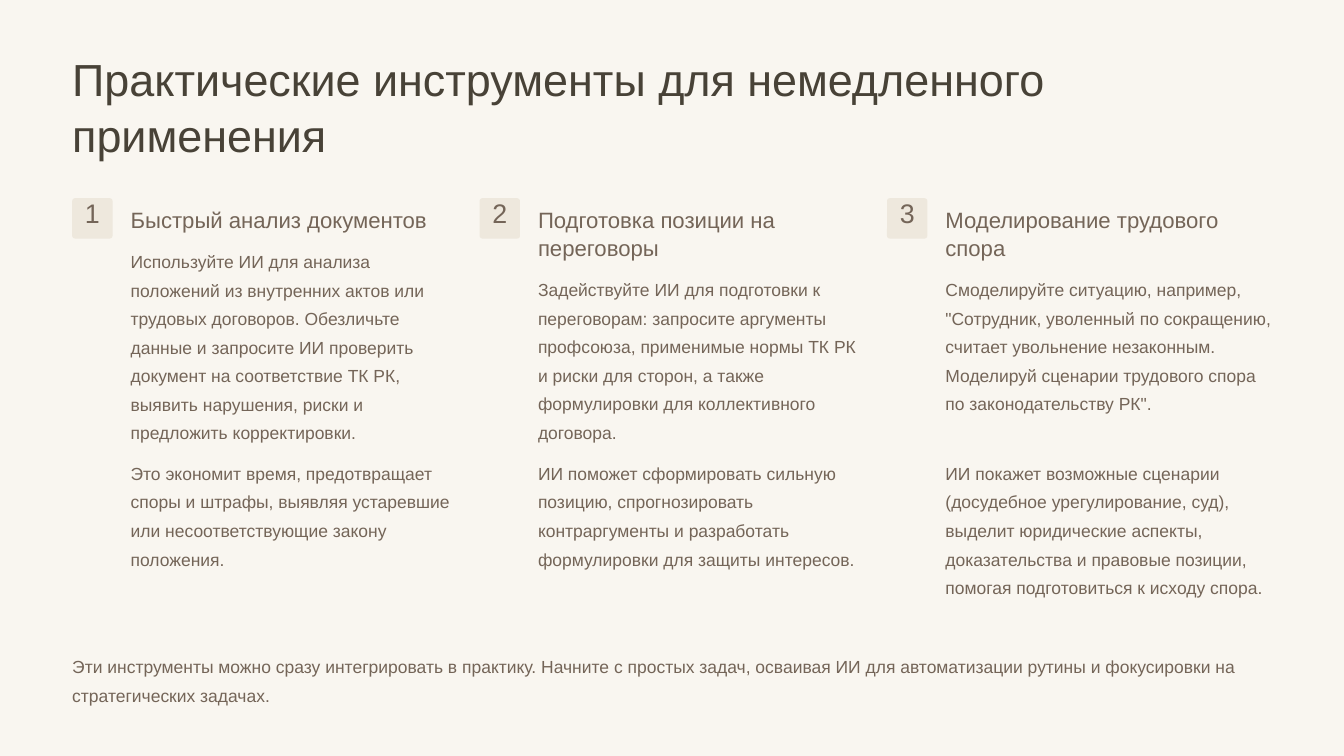
from pptx import Presentation
from pptx.dml.color import RGBColor
from pptx.enum.shapes import MSO_SHAPE
from pptx.enum.text import MSO_ANCHOR, MSO_AUTO_SIZE, PP_ALIGN
from pptx.util import Inches, Pt

ROUND = MSO_SHAPE.ROUNDED_RECTANGLE
TOP = MSO_ANCHOR.TOP
FIXED = MSO_AUTO_SIZE.NONE
LEFT, CENTER = PP_ALIGN.LEFT, PP_ALIGN.CENTER

WIDE, HIGH = 16, 9
COLS, ROWS = 160, 90
EDGE, FULL = 8.6, 142.8
STEP, INDENT, BODY = 48.5, 6.95, 38.9

TITLE = "Практические инструменты для немедленного применения"
CLOSING = (
    "Эти инструменты можно сразу интегрировать в практику. Начните с простых задач, "
    "осваивая ИИ для автоматизации рутины и фокусировки на стратегических задачах."
)
TOOLS = [
    (
        "Быстрый анализ документов", 1,
        "Используйте ИИ для анализа положений из внутренних актов или трудовых договоров. "
        "Обезличьте данные и запросите ИИ проверить документ на соответствие ТК РК, "
        "выявить нарушения, риски и предложить корректировки.",
        "Это экономит время, предотвращает споры и штрафы, выявляя устаревшие "
        "или несоответствующие закону положения.",
    ),
    (
        "Подготовка позиции на переговоры", 2,
        "Задействуйте ИИ для подготовки к переговорам: запросите аргументы профсоюза, "
        "применимые нормы ТК РК и риски для сторон, а также формулировки "
        "для коллективного договора.",
        "ИИ поможет сформировать сильную позицию, спрогнозировать контраргументы "
        "и разработать формулировки для защиты интересов.",
    ),
    (
        "Моделирование трудового спора", 2,
        "Смоделируйте ситуацию, например, \"Сотрудник, уволенный по сокращению, "
        "считает увольнение незаконным. Моделируй сценарии трудового спора "
        "по законодательству РК\".",
        "ИИ покажет возможные сценарии (досудебное урегулирование, суд), выделит "
        "юридические аспекты, доказательства и правовые позиции, помогая "
        "подготовиться к исходу спора.",
    ),
]


def color(code):
    return RGBColor.from_string(code)


class Deck:
    font = "Arial"
    paper, dark, brown, sand = "F9F6F0", "484237", "746558", "EEE8DD"

    def __init__(self):
        self.show = Presentation()
        self.show.slide_width = Inches(WIDE)
        self.show.slide_height = Inches(HIGH)
        self.slide = self.show.slides.add_slide(self.show.slide_layouts[5])
        back = self.slide.background.fill
        back.solid()
        back.fore_color.rgb = color(self.paper)

    def box(self, x, y, w, h):
        across = self.show.slide_width / COLS
        down = self.show.slide_height / ROWS
        return [round(n) for n in (x * across, y * down, w * across, h * down)]

    def label(self, shape, words, size, line, ink, align=LEFT):
        frame = shape.text_frame
        frame.text = words
        frame.word_wrap = True
        frame.auto_size = FIXED
        frame.vertical_anchor = TOP
        frame.margin_left = frame.margin_right = 0
        frame.margin_top = frame.margin_bottom = 0
        for para in frame.paragraphs:
            para.alignment = align
            para.line_spacing = Pt(line)
            for run in para.runs:
                run.font.name = self.font
                run.font.size = Pt(size)
                run.font.color.rgb = color(ink)

    def title(self, words, x, y, w, h):
        shape = self.slide.shapes.title
        shape.left, shape.top, shape.width, shape.height = self.box(x, y, w, h)
        self.label(shape, words, 38.5, 48, self.dark)

    def text(self, words, x, y, w, h, size=15, line=24.5, align=LEFT):
        shape = self.slide.shapes.add_textbox(*self.box(x, y, w, h))
        self.label(shape, words, size, line, self.brown, align)

    def badge(self, number, x, y, side):
        tile = self.slide.shapes.add_shape(ROUND, *self.box(x, y, side, side))
        tile.adjustments[0] = 0.067
        tile.shadow.inherit = False
        tile.fill.solid()
        tile.fill.fore_color.rgb = color(self.sand)
        tile.line.fill.background()
        self.text(str(number), x + 0.8, y + 0.4, side - 1.6, 4, 23, 23, CENTER)

    def tool(self, index, head, lines, task, gain):
        x = EDGE + index * STEP
        left = x + INDENT
        self.badge(index + 1, x, 23.6, 4.8)
        self.text(head, left, 24.4, BODY, 3.35 * lines, 19, 24)
        start = 25.65 + 3.33 * lines
        self.text(task, left, start, BODY, 53 - start)
        self.text(gain, left, 54.2, BODY, 17.2)


def main():
    deck = Deck()
    deck.title(TITLE, EDGE, 5.9, FULL, 13.4)
    for index, tool in enumerate(TOOLS):
        deck.tool(index, *tool)
    deck.text(CLOSING, EDGE, 77.2, FULL, 6.9)
    deck.show.save("out.pptx")


if __name__ == "__main__":
    main()
